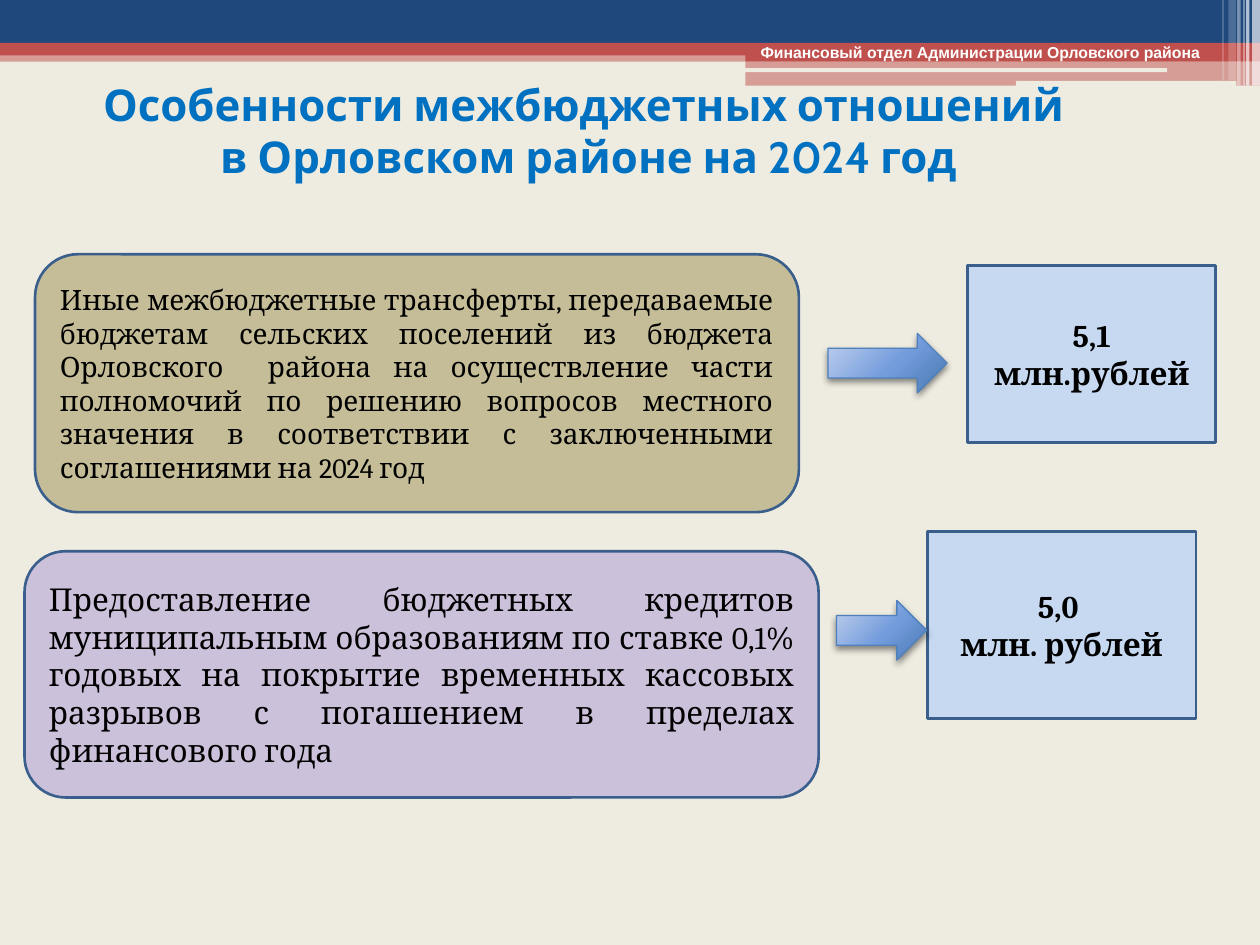
from dataclasses import dataclass

from pptx import Presentation
from pptx.dml.color import RGBColor
from pptx.enum.shapes import MSO_SHAPE
from pptx.enum.text import MSO_ANCHOR, PP_ALIGN
from pptx.oxml import parse_xml
from pptx.oxml.ns import nsdecls, qn
from pptx.util import Pt

RECT = MSO_SHAPE.RECTANGLE
ROUND = MSO_SHAPE.ROUNDED_RECTANGLE
ARROW = MSO_SHAPE.RIGHT_ARROW
MIDDLE, TOP = MSO_ANCHOR.MIDDLE, MSO_ANCHOR.TOP
LEFT, CENTER, JUSTIFY = PP_ALIGN.LEFT, PP_ALIGN.CENTER, PP_ALIGN.JUSTIFY

COLORS = {
    "paper": "EEECE1", "navy": "1F497D", "red": "C0504D", "white": "FFFFFF",
    "title": "0070C0", "black": "000000", "edge": "3A5F8C", "rim": "4F81BD",
    "sky": "C6D9F1", "lilac": "CCC1DA", "sand": "C4BD97",
    "light": "C4D2EE", "mid": "739CDD", "deep": "4A78B0",
}


@dataclass
class Area:
    left: float
    top: float
    width: float
    height: float

    def points(self) -> list:
        return [Pt(v) for v in (self.left, self.top, self.width, self.height)]


@dataclass
class Band:
    area: Area
    color: str
    alpha: int = 100
    kind: int = RECT


@dataclass
class Style:
    size: float
    font: str = "Cambria"
    color: str = "black"
    bold: bool = False
    align: int = CENTER


@dataclass
class Card:
    area: Area
    kind: int
    fill: str
    text: str
    style: Style


def stripe(left: float, width: float, height: float, alpha: int) -> Band:
    return Band(Area(left, 0, width, height), "white", alpha)


BANDS = [
    Band(Area(0, 28.8, 720, 6.5), "red", 50),
    Band(Area(0, 0, 720, 24.5), "navy"),
    Band(Area(0, 24.5, 720, 7.2), "red"),
    Band(Area(426, 28, 294, 7), "red"),
    Band(Area(426, 34.7, 294, 14.2), "red", 50),
    Band(Area(425.5, 39, 241.5, 2.2), "paper", kind=ROUND),
    Band(Area(580.5, 46.2, 126, 2.8), "paper", kind=ROUND),
    stripe(715.5, 4.5, 49, 65),
    stripe(712, 2, 49, 65),
    stripe(710.5, 0.7, 49, 60),
    stripe(707, 2, 49, 40),
    stripe(702, 4.3, 46, 20),
    stripe(698.5, 0.7, 46, 30),
]

SUM = Style(18, bold=True)
CARDS = [
    Card(Area(530, 303.7, 153.4, 106.8), RECT, "sky", "5,0 \nмлн. рублей", SUM),
    Card(Area(14, 315, 453.8, 140.7), ROUND, "lilac",
         "Предоставление бюджетных кредитов муниципальным образованиям по ставке "
         "0,1% годовых на покрытие временных кассовых разрывов с погашением в "
         "пределах финансового года", Style(18, align=JUSTIFY)),
    Card(Area(20, 145.3, 436.5, 147.4), ROUND, "sand",
         "Иные межбюджетные трансферты, передаваемые бюджетам сельских поселений "
         "из бюджета Орловского  района на осуществление части полномочий по "
         "решению вопросов местного значения в соответствии с заключенными "
         "соглашениями на 2024 год", Style(16, align=JUSTIFY)),
    Card(Area(553, 151.7, 141.8, 101), RECT, "sky", "5,1\nмлн.рублей", SUM),
]

ARROWS = [Area(478, 343.2, 51.5, 34), Area(473.2, 190.5, 68, 34)]
STOPS = [(0, "light"), (55, "mid"), (100, "deep")]


def tint(name: str) -> RGBColor:
    return RGBColor.from_string(COLORS[name])


def write(frame, text: str, style: Style, anchor=MIDDLE) -> None:
    frame.word_wrap = True
    frame.vertical_anchor = anchor
    frame.text = text
    for para in frame.paragraphs:
        para.alignment = style.align
        for run in para.runs:
            font = run.font
            font.name, font.size, font.bold = style.font, Pt(style.size), style.bold
            font.color.rgb = tint(style.color)


def add_shape(slide, kind: int, area: Area):
    shape = slide.shapes.add_shape(kind, *area.points())
    shape.shadow.inherit = False
    return shape


def add_band(slide, band: Band) -> None:
    shape = add_shape(slide, band.kind, band.area)
    shape.fill.solid()
    shape.fill.fore_color.rgb = tint(band.color)
    shape.line.fill.background()
    if band.alpha < 100:
        color = shape._element.spPr.find(".//" + qn("a:srgbClr"))
        color.append(parse_xml(f'<a:alpha {nsdecls("a")} val="{band.alpha * 1000}"/>'))


def add_card(slide, card: Card) -> None:
    shape = add_shape(slide, card.kind, card.area)
    shape.fill.solid()
    shape.fill.fore_color.rgb = tint(card.fill)
    shape.line.color.rgb = tint("edge")
    shape.line.width = Pt(1.5)
    write(shape.text_frame, card.text, card.style)


def add_arrow(slide, area: Area) -> None:
    """Draw a right arrow with a radial gradient and a soft shadow below."""
    shape = add_shape(slide, ARROW, area)
    shape.line.color.rgb = tint("rim")
    shape.line.width = Pt(0.75)
    shape.fill.gradient()
    props = shape._element.spPr
    stops = "".join(f'<a:gs pos="{pos * 1000}"><a:srgbClr val="{COLORS[name]}"/></a:gs>'
                    for pos, name in STOPS)
    props.replace(props.find(qn("a:gradFill")), parse_xml(
        f'<a:gradFill {nsdecls("a")} rotWithShape="1"><a:gsLst>{stops}</a:gsLst>'
        '<a:path path="circle"><a:fillToRect l="-40000" t="-90000" r="140000" '
        'b="190000"/></a:path></a:gradFill>'))
    props.find(qn("a:effectLst")).append(parse_xml(
        f'<a:outerShdw {nsdecls("a")} blurRad="{Pt(4)}" dist="{Pt(2)}" dir="5400000" '
        f'rotWithShape="0"><a:srgbClr val="{COLORS["black"]}"><a:alpha val="45000"/>'
        '</a:srgbClr></a:outerShdw>'))


def add_label(slide, area: Area, text: str, style: Style, anchor: int):
    frame = slide.shapes.add_textbox(*area.points()).text_frame
    write(frame, text, style, anchor)
    return frame


def main() -> None:
    deck = Presentation()
    deck.slide_width, deck.slide_height = Pt(720), Pt(540)
    slide = deck.slides.add_slide(deck.slide_layouts[6])
    slide.background.fill.solid()
    slide.background.fill.fore_color.rgb = tint("paper")

    for band in BANDS:
        add_band(slide, band)
    add_label(slide, Area(427.5, 21, 281.5, 18),
              "Финансовый отдел Администрации Орловского района",
              Style(9, "Arial", "white", True, LEFT), TOP)
    title = add_label(slide, Area(0, 37.5, 666, 73.5),
                      "Особенности межбюджетных отношений \vв Орловском районе на 2024 год",
                      Style(25, "Cabin", "title", True), MIDDLE)
    title.margin_left = Pt(13.7)
    for card in CARDS:
        add_card(slide, card)
    for area in ARROWS:
        add_arrow(slide, area)
    deck.save("out.pptx")


if __name__ == "__main__":
    main()
